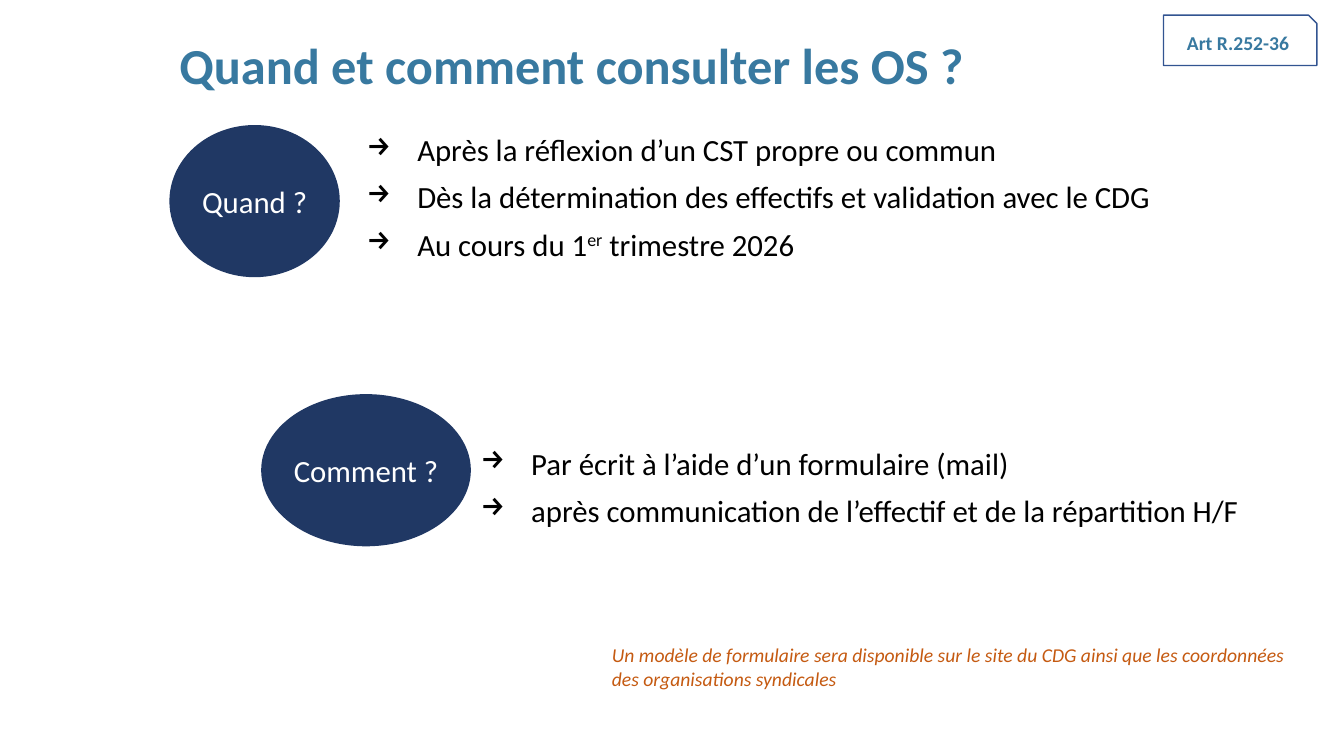
import lxml.etree
import pptx
import pptx.dml.color
import pptx.enum.shapes
import pptx.enum.text
import pptx.oxml.ns
import pptx.util

PX = 9144  # 100 px to the inch
RGBColor = pptx.dml.color.RGBColor
BLUE = RGBColor(0x38, 0x79, 0xA0)
NAVY = RGBColor(0x20, 0x38, 0x64)
OUTLINE = RGBColor(0x32, 0x54, 0x91)
ORANGE = RGBColor(0xC5, 0x5A, 0x11)
BLACK = RGBColor(0, 0, 0)
WHITE = RGBColor(255, 255, 255)

SHAPES = pptx.enum.shapes.MSO_SHAPE
ALIGN = pptx.enum.text.PP_ALIGN
ANCHOR = pptx.enum.text.MSO_ANCHOR

TITLE = {"size": 36, "color": BLUE, "bold": True}
TAG = {"size": 14, "color": BLUE, "bold": True}
NOTE = {"size": 14, "color": ORANGE, "italic": True}
BODY = {"size": 22, "color": BLACK}
BUBBLE = {"size": 22, "color": WHITE}


def to_emu(box):
    return [pptx.util.Emu(length * PX) for length in box]


def add_run(paragraph, text, style):
    run = paragraph.add_run()
    run.text = text
    values = {"name": "Calibri", **style}
    run.font.color.rgb = values.pop("color")
    values["size"] = pptx.util.Pt(values["size"])
    for name, value in values.items():
        setattr(run.font, name, value)
    return run


def add_text(slide, box, text, style, anchor=ANCHOR.TOP):
    frame = slide.shapes.add_textbox(*to_emu(box)).text_frame
    frame.word_wrap = True
    frame.vertical_anchor = anchor
    add_run(frame.paragraphs[0], text, style)
    return frame


def add_label(slide, kind, box, text, style, fill=None, line=None, margin=None):
    shape = slide.shapes.add_shape(kind, *to_emu(box))
    shape.shadow.inherit = False
    if fill is None:
        shape.fill.background()
    else:
        shape.fill.solid()
        shape.fill.fore_color.rgb = fill
    if line is None:
        shape.line.fill.background()
    else:
        shape.line.color.rgb = line
        shape.line.width = pptx.util.Pt(1)
    frame = shape.text_frame
    frame.word_wrap = True
    frame.vertical_anchor = ANCHOR.MIDDLE
    if margin is not None:
        for side in ("left", "top", "right", "bottom"):
            setattr(frame, f"margin_{side}", margin)
    frame.paragraphs[0].alignment = ALIGN.CENTER
    add_run(frame.paragraphs[0], text, style)


def add_arrow_list(slide, box, items):
    """Each item is a list of (text, superscript) parts."""
    frame = slide.shapes.add_textbox(*to_emu(box)).text_frame
    frame.word_wrap = True
    for index, parts in enumerate(items):
        paragraph = frame.paragraphs[0] if index == 0 else frame.add_paragraph()
        properties = paragraph._p.get_or_add_pPr()
        properties.set("marL", str(50 * PX))
        properties.set("indent", str(-50 * PX))
        bullet = lxml.etree.SubElement(properties, pptx.oxml.ns.qn("a:buChar"))
        bullet.set("char", "→")
        paragraph.alignment = ALIGN.JUSTIFY
        paragraph.line_spacing = 0.9
        if index:
            paragraph.space_before = pptx.util.Pt(10)
        for text, superscript in parts:
            run = add_run(paragraph, text, BODY)
            if superscript:
                run._r.get_or_add_rPr().set("baseline", "30000")


def add_question(slide, box, bubble_width, question, list_box, items):
    """Bubble at the left of the box, list placed relative to the box."""
    left, top, height = box
    add_label(slide, SHAPES.OVAL, (left, top, bubble_width, height),
              question, BUBBLE, fill=NAVY, margin=0)
    offset_x, offset_y, width, list_height = list_box
    add_arrow_list(slide, (left + offset_x, top + offset_y, width, list_height), items)


def add_header(slide, left, top):
    frame = add_text(slide, (left, top + 12, 951, 82),
                     "Quand et comment consulter les OS ?", TITLE, ANCHOR.MIDDLE)
    frame.paragraphs[0].line_spacing = 0.9
    add_label(slide, SHAPES.SNIP_1_RECTANGLE, (left + 986, top, 152, 50),
              "Art R.252-36", TAG, line=OUTLINE)


def main():
    presentation = pptx.Presentation()
    presentation.slide_width, presentation.slide_height = to_emu((1333, 750))
    slide = presentation.slides.add_slide(presentation.slide_layouts[6])

    # Title and article tag
    add_header(slide, 168, 15)

    # When
    add_question(slide, (168, 124, 151), 169, "Quand ?", (186, 5, 812, 142), [
        [("Après la réflexion d’un CST propre ou commun", False)],
        [("Dès la détermination des effectifs et validation avec le CDG", False)],
        [("Au cours du 1", False), ("er", True), (" trimestre 2026", False)],
    ])

    # How
    add_question(slide, (259, 391, 151), 208, "Comment ?", (208, 49, 849, 102), [
        [("Par écrit à l’aide d’un formulaire (mail)", False)],
        [("après communication de l’effectif et de la répartition H/F", False)],
    ])

    # Closing remark
    add_text(slide, (597, 633, 718, 57),
             "Un modèle de formulaire sera disponible sur le site du CDG ainsi que "
             "les coordonnées des organisations syndicales", NOTE)

    presentation.save("out.pptx")


if __name__ == "__main__":
    main()
